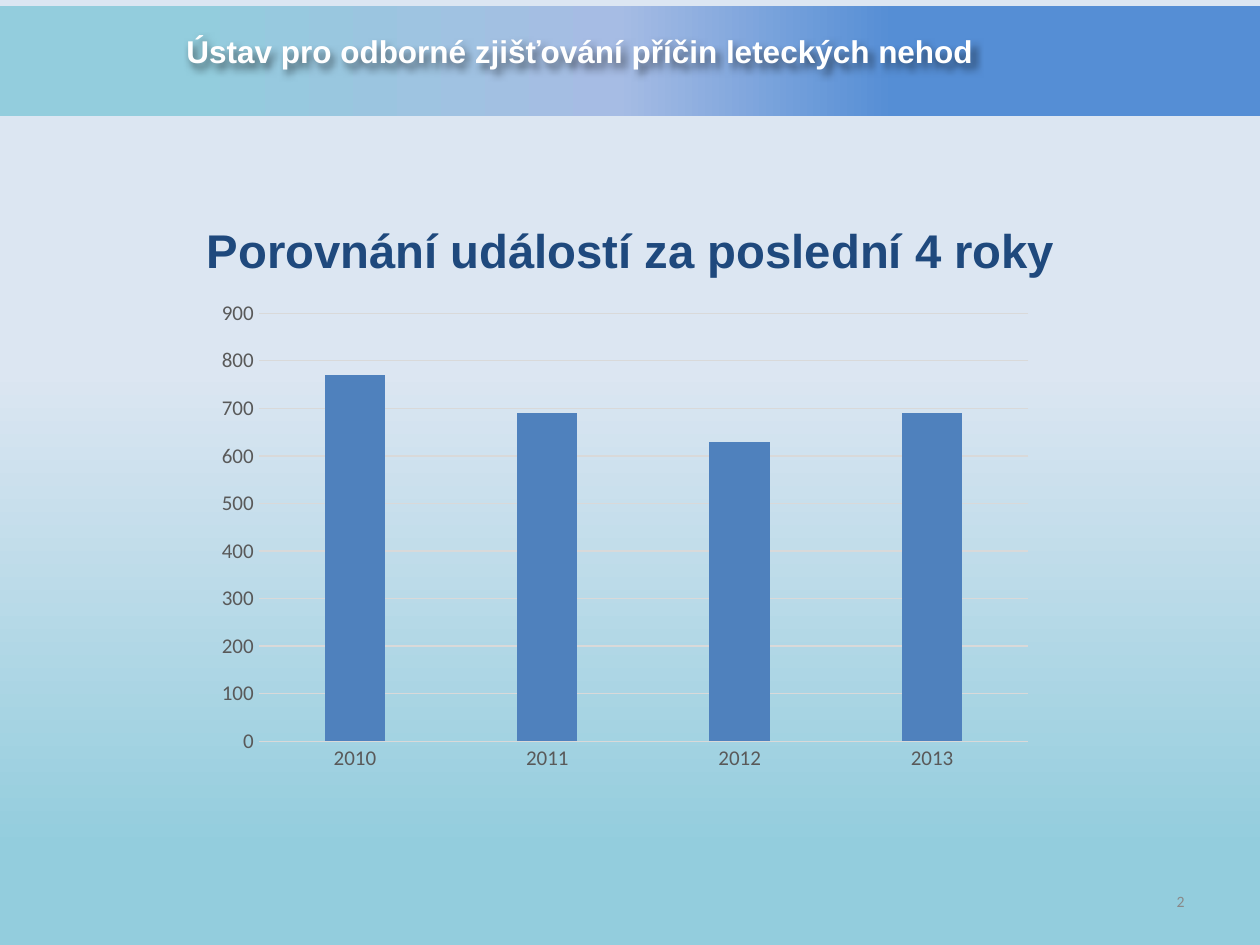
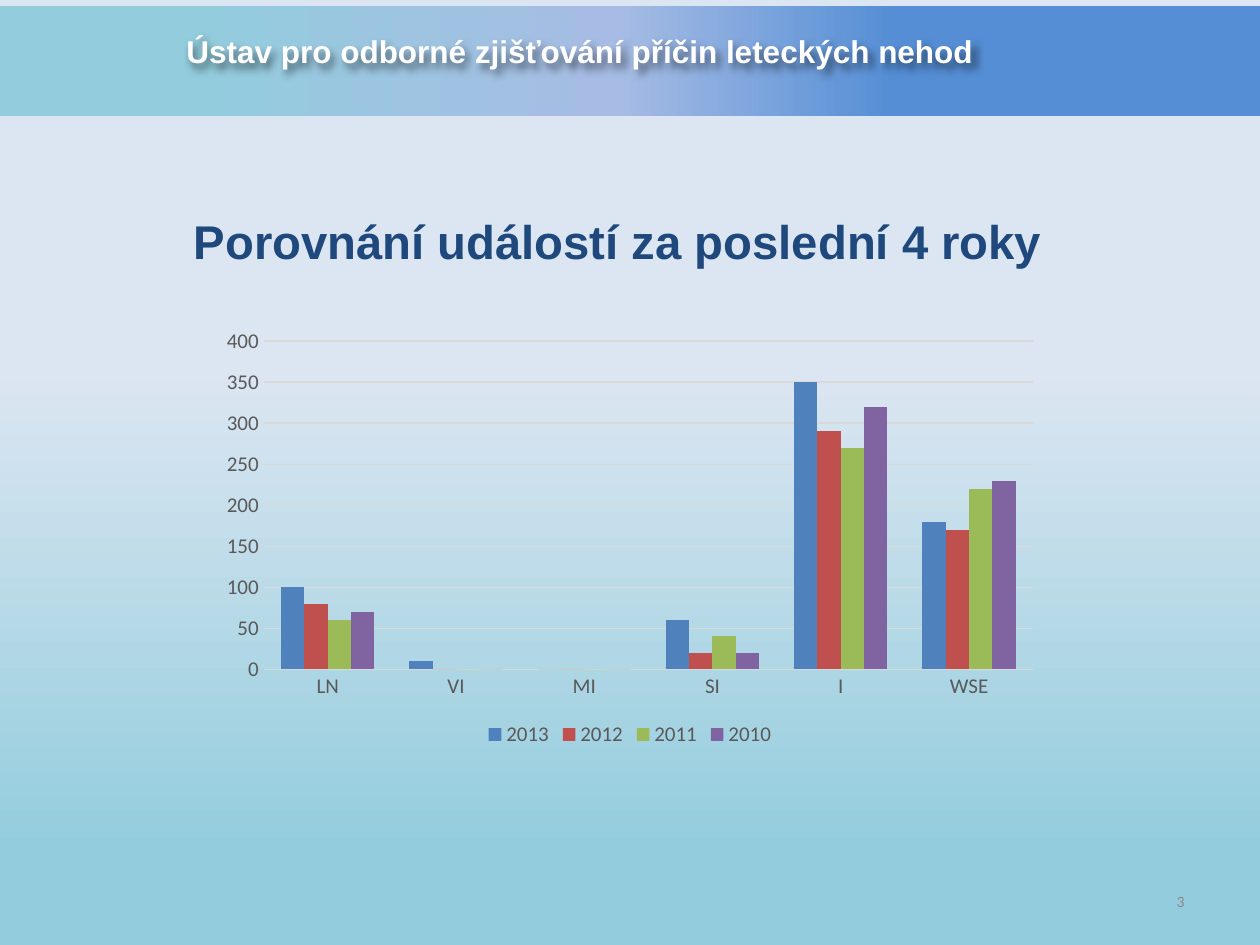
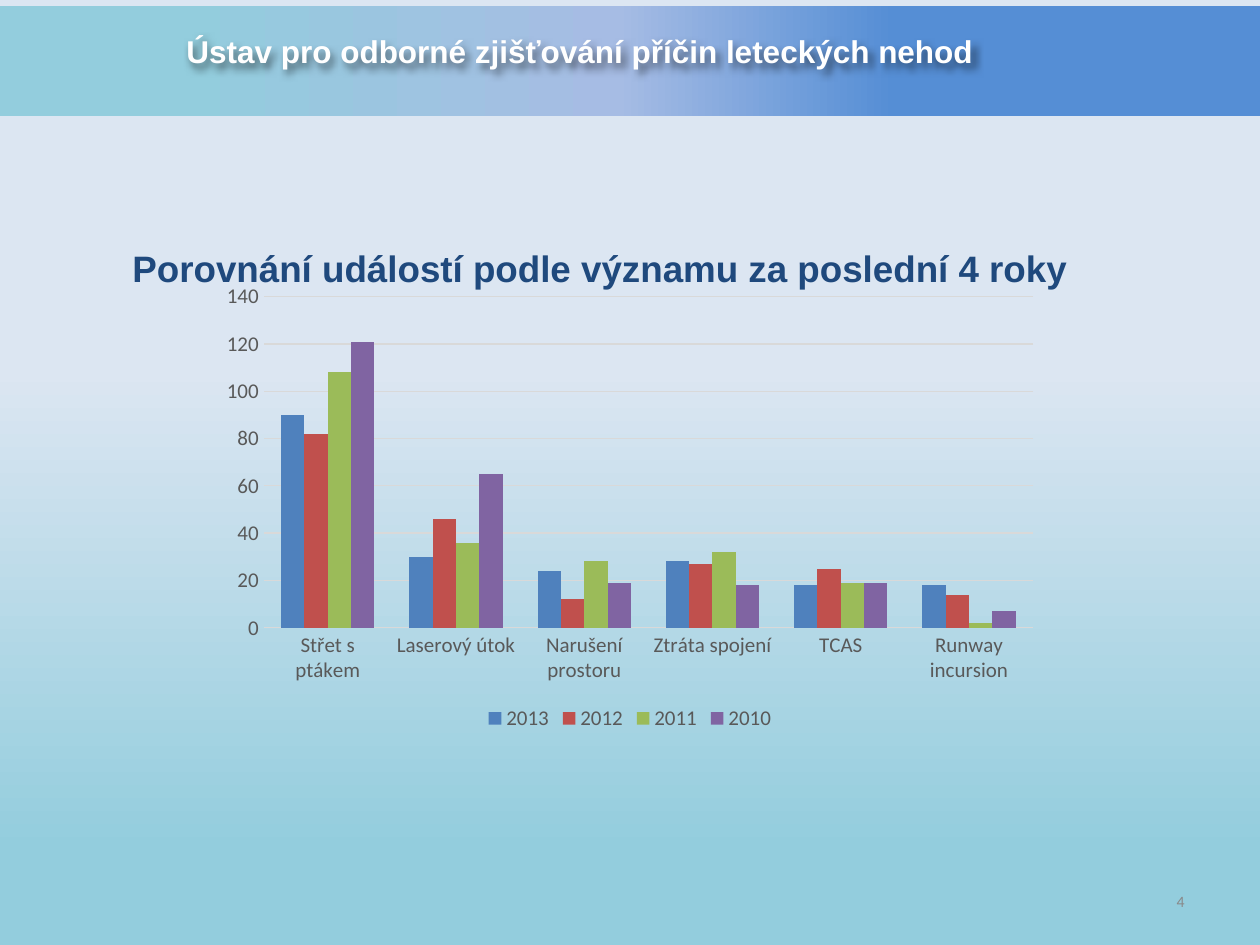
import pptx
import pptx.chart.data
import pptx.dml.color
import pptx.enum.chart
import pptx.enum.shapes
import pptx.enum.text
import pptx.oxml
import pptx.oxml.ns
import pptx.util
from lxml import etree

RGB = pptx.dml.color.RGBColor
CHART = pptx.enum.chart
ALIGN = pptx.enum.text.PP_ALIGN
ANCHOR = pptx.enum.text.MSO_ANCHOR

# Colours
WHITE = RGB(0xFF, 0xFF, 0xFF)
NAVY = RGB(0x1F, 0x49, 0x7D)
AQUA = RGB(0x93, 0xCD, 0xDD)
PALE = RGB(0xDC, 0xE6, 0xF2)
SKY = RGB(0x55, 0x8E, 0xD5)
LILAC = RGB(0xA6, 0xBC, 0xE4)
PAGE_GREY = RGB(0x89, 0x89, 0x89)
LABEL_GREY = RGB(0x59, 0x59, 0x59)
GRID_GREY = RGB(0xD9, 0xD9, 0xD9)
SERIES_COLOURS = [RGB(0x4F, 0x81, 0xBD), RGB(0xC0, 0x50, 0x4D),
                  RGB(0x9B, 0xBB, 0x59), RGB(0x80, 0x64, 0xA2)]

# Content; places are (left, top, width, height) in px
INSTITUTE = "Ústav pro odborné zjišťování příčin leteckých nehod"
FIRST_PAGE = 2
SLIDES = [
    {
        "title": "Porovnání událostí za poslední 4 roky",
        "title_size": 27, "title_at": (83, 215, 1096, 568),
        "chart_at": (205, 291, 840, 490),
        "stacked": True, "gap": 219, "top": 900, "step": 100,
        "categories": ["2010", "2011", "2012", "2013"],
        "series": {"Series 1": [770, 690, 630, 690]},
    },
    {
        "title": "Porovnání událostí za poslední 4 roky",
        "title_size": 27, "title_at": (46, 206, 1144, 626),
        "chart_at": (210, 320, 840, 432),
        "stacked": False, "gap": 150, "top": 400, "step": 50,
        "categories": ["LN", "VI", "MI", "SI", "I", "WSE"],
        "series": {
            "2013": [100, 10, 0, 60, 350, 180],
            "2012": [80, 0, 0, 20, 290, 170],
            "2011": [60, 0, 0, 40, 270, 220],
            "2010": [70, 0, 0, 20, 320, 230],
        },
    },
    {
        "title": "Porovnání událostí podle významu za poslední 4 roky",
        "title_size": 21, "title_at": (81, 240, 1038, 529),
        "chart_at": (210, 275, 840, 461),
        "stacked": False, "gap": 150, "top": 140, "step": 20,
        "categories": ["Střet s ptákem", "Laserový útok", "Narušení prostoru",
                       "Ztráta spojení", "TCAS", "Runway incursion"],
        "series": {
            "2013": [90, 30, 24, 28, 18, 18],
            "2012": [82, 46, 12, 27, 25, 14],
            "2011": [108, 36, 28, 32, 19, 2],
            "2010": [121, 65, 19, 18, 19, 7],
        },
    },
]

# Shared layout
SLIDE_SIZE = (1260, 945)
BAND_AT = (0, 6, 1260, 110)
INSTITUTE_AT = (174, 26, 1091, 50)
PAGE_AT = (903, 876, 294, 50)
BAND_STOPS = [(29, SKY), (51, LILAC), (86, AQUA)]
BACKGROUND_STOPS = [(10, AQUA), (61, PALE)]
TEXT_SHADOW = (
    '<a:effectLst %s><a:outerShdw blurRad="50800" dist="38100" dir="2700000">'
    '<a:srgbClr val="000000"><a:alpha val="50000"/></a:srgbClr>'
    '</a:outerShdw></a:effectLst>' % pptx.oxml.ns.nsdecls("a"))


def emu(lengths):
    return [pptx.util.Emu(round(px * 914400 / 126)) for px in lengths]


def set_gradient(fill, element, angle, stops):
    """Fill with a linear gradient of any number of stops."""
    qn = pptx.oxml.ns.qn
    fill.gradient()
    fill.gradient_angle = angle
    stop_list = element.find(".//" + qn("a:gsLst"))
    for stop in list(stop_list):
        stop_list.remove(stop)
    for percent, colour in stops:
        stop = etree.SubElement(stop_list, qn("a:gs"), pos=str(percent * 1000))
        etree.SubElement(stop, qn("a:srgbClr"), val=str(colour))


def style_font(font, name, size, colour, bold=False):
    font.name = name
    font.size = pptx.util.Pt(size)
    font.bold = bold
    font.color.rgb = colour


def add_text(slide, text, place, font, align=ALIGN.LEFT, anchor=ANCHOR.TOP):
    box = slide.shapes.add_textbox(*emu(place))
    frame = box.text_frame
    frame.word_wrap = True
    frame.vertical_anchor = anchor
    frame.text = text
    paragraph = frame.paragraphs[0]
    paragraph.alignment = align
    style_font(paragraph.runs[0].font, *font)
    return box


def add_header(slide):
    band = slide.shapes.add_shape(
        pptx.enum.shapes.MSO_SHAPE.RECTANGLE, *emu(BAND_AT))
    band.shadow.inherit = False
    band.line.fill.background()
    set_gradient(band.fill, band.element, 180, BAND_STOPS)
    institute = add_text(slide, INSTITUTE, INSTITUTE_AT,
                         ("Arial", 18, WHITE, True))
    institute.element.spPr.append(pptx.oxml.parse_xml(TEXT_SHADOW))


def add_columns(slide, content):
    data = pptx.chart.data.CategoryChartData()
    data.categories = content["categories"]
    for name, values in content["series"].items():
        data.add_series(name, values)
    kind = (CHART.XL_CHART_TYPE.COLUMN_STACKED if content["stacked"]
            else CHART.XL_CHART_TYPE.COLUMN_CLUSTERED)
    chart = slide.shapes.add_chart(kind, *emu(content["chart_at"]), data).chart
    chart.has_title = False
    style_font(chart.font, "Calibri", 12, LABEL_GREY)

    # Columns
    plot = chart.plots[0]
    plot.vary_by_categories = False
    plot.gap_width = content["gap"]
    for series, colour in zip(plot.series, SERIES_COLOURS):
        series.format.fill.solid()
        series.format.fill.fore_color.rgb = colour

    # Axes
    for axis in (chart.category_axis, chart.value_axis):
        axis.major_tick_mark = CHART.XL_TICK_MARK.NONE
        axis.minor_tick_mark = CHART.XL_TICK_MARK.NONE
        style_font(axis.tick_labels.font, "Calibri", 12, LABEL_GREY)
        axis.format.line.fill.background()
    chart.value_axis.minimum_scale = 0
    chart.value_axis.maximum_scale = content["top"]
    chart.value_axis.major_unit = content["step"]
    grey_lines = [chart.value_axis.major_gridlines.format.line]
    if content["stacked"]:
        grey_lines.append(chart.category_axis.format.line)
    for line in grey_lines:
        line.color.rgb = GRID_GREY
        line.width = pptx.util.Pt(0.75)

    # Legend
    chart.has_legend = len(content["series"]) > 1
    if chart.has_legend:
        chart.legend.position = CHART.XL_LEGEND_POSITION.BOTTOM
        chart.legend.include_in_layout = False
        style_font(chart.legend.font, "Calibri", 12, LABEL_GREY)


def main():
    deck = pptx.Presentation()
    deck.slide_width, deck.slide_height = emu(SLIDE_SIZE)
    master = deck.slide_master
    set_gradient(master.background.fill, master.element, 90, BACKGROUND_STOPS)
    for page, content in enumerate(SLIDES, FIRST_PAGE):
        slide = deck.slides.add_slide(deck.slide_layouts[6])
        add_header(slide)
        add_text(slide, content["title"], content["title_at"],
                 ("Arial", content["title_size"], NAVY, True), ALIGN.CENTER)
        add_text(slide, str(page), PAGE_AT, ("Calibri", 9, PAGE_GREY),
                 ALIGN.RIGHT, ANCHOR.MIDDLE)
        add_columns(slide, content)
    deck.save("out.pptx")


if __name__ == "__main__":
    main()
